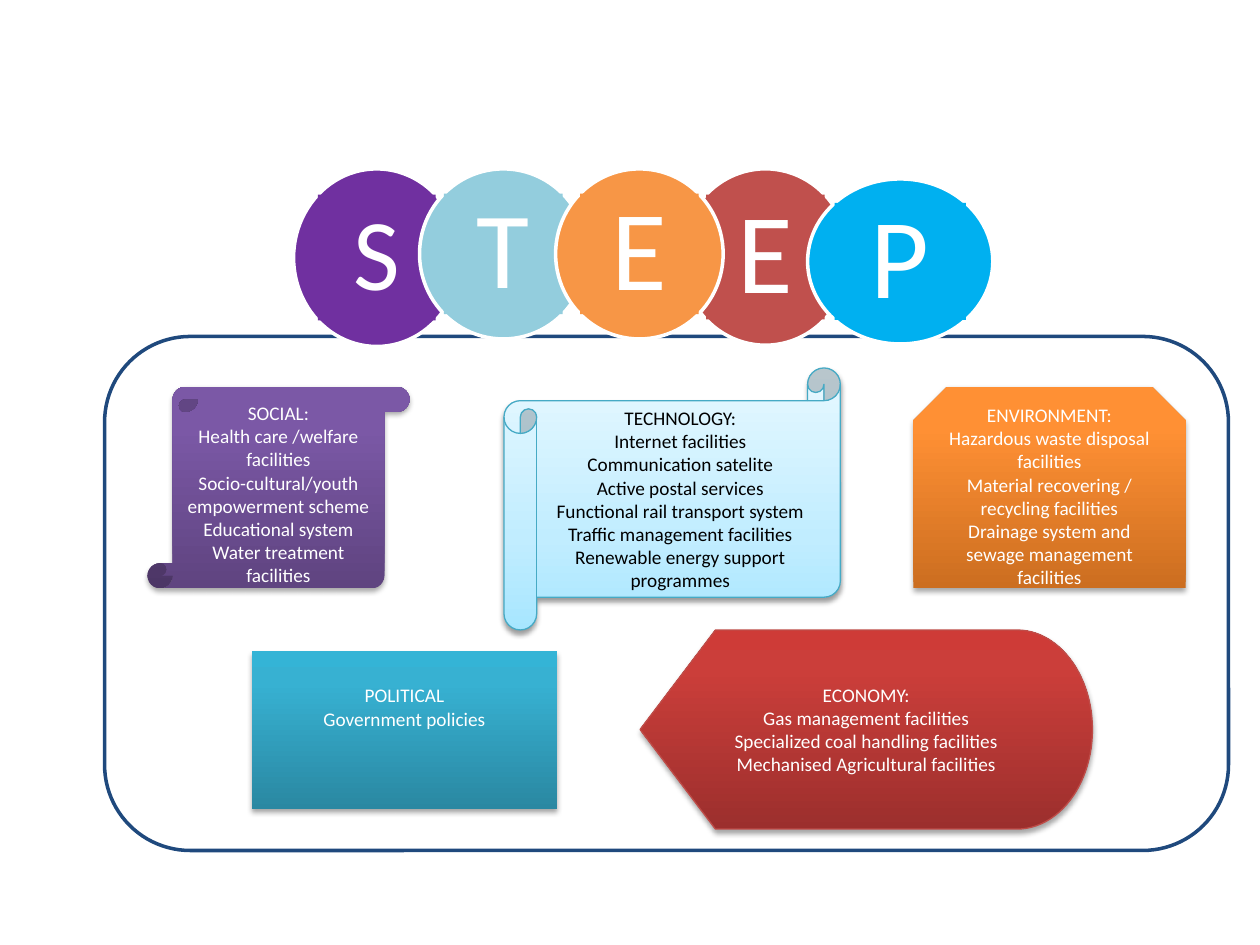
from copy import deepcopy
from dataclasses import dataclass
from typing import Optional

from lxml import etree
from pptx import Presentation
from pptx.dml.color import RGBColor
from pptx.enum import shapes, text
from pptx.oxml import ns
from pptx.util import Inches, Pt

Kind = shapes.MSO_SHAPE


@dataclass(frozen=True)
class Theme:
    font: str = "Calibri"
    body_size: float = 11
    white: str = "FFFFFF"
    black: str = "000000"
    frame: str = "1F497D"
    thin: float = 0.75
    thick: float = 2
    purple: tuple = ((0, "5F4480"), (80, "7B58A6"), (100, "7C57A8"))
    ice: tuple = ((0, "A7E6FF"), (35, "C1EDFF"), (100, "E7F8FF"))
    orange: tuple = ((0, "CC6E20"), (80, "FF9034"), (100, "FF9136"))
    teal: tuple = ((0, "2A88A2"), (80, "37B1D2"), (100, "34B4D6"))
    red: tuple = ((0, "9C2F2D"), (80, "CB3E3A"), (100, "CE3B37"))
    ice_line: str = "46AAC5"
    red_line: str = "BF4C48"


THEME = Theme()
INSCRIBED = 0.146


@dataclass(frozen=True)
class Box:
    left: float
    top: float
    width: float
    height: float

    def inscribed(self) -> "Box":
        return Box(
            self.left + self.width * INSCRIBED,
            self.top + self.height * INSCRIBED,
            self.width * (1 - 2 * INSCRIBED),
            self.height * (1 - 2 * INSCRIBED),
        )


@dataclass(frozen=True)
class Panel:
    kind: Kind
    box: Box
    stops: tuple
    lines: tuple
    text_color: str = THEME.white
    outline: Optional[str] = None
    shadow_alpha: int = 35
    bottom_inset: float = 0.05


@dataclass(frozen=True)
class Letter:
    character: str
    box: Box
    color: str
    size: float
    inset: float = 0.09


PANELS = (
    Panel(Kind.RECTANGLE, Box(2, 5.17, 2.42, 1.25), THEME.teal,
          ("POLITICAL", "Government policies"), bottom_inset=0.42),
    Panel(Kind.SNIP_2_SAME_RECTANGLE, Box(7.25, 3.07, 2.16, 1.6), THEME.orange,
          ("ENVIRONMENT:", "Hazardous waste disposal facilities",
           "Material recovering / recycling facilities",
           "Drainage system and sewage management facilities")),
    Panel(Kind.FLOWCHART_DISPLAY, Box(5.08, 5, 3.59, 1.58), THEME.red,
          ("ECONOMY:", "Gas management facilities",
           "Specialized coal handling facilities",
           "Mechanised Agricultural facilities"), outline=THEME.red_line),
    Panel(Kind.VERTICAL_SCROLL, Box(1.17, 3.07, 2.08, 1.6), THEME.purple,
          ("SOCIAL:", "Health care /welfare facilities",
           "Socio-cultural/youth empowerment scheme", "Educational system",
           "Water treatment facilities")),
    Panel(Kind.HORIZONTAL_SCROLL, Box(4, 2.92, 2.67, 2.08), THEME.ice,
          ("TECHNOLOGY:", "Internet facilities", "Communication satelite",
           "Active postal services", "Functional rail transport system",
           "Traffic management facilities",
           "Renewable energy support programmes"),
          text_color=THEME.black, outline=THEME.ice_line, shadow_alpha=38),
)

LETTERS = (
    Letter("S", Box(2.33, 1.34, 1.32, 1.41), "7030A0", 58, 0.08),
    Letter("T", Box(3.33, 1.34, 1.33, 1.35), "93CDDD", 62),
    Letter("E", Box(5.41, 1.34, 1.33, 1.4), "C0504D", 65),
    Letter("E", Box(4.41, 1.34, 1.33, 1.35), "F79646", 65),
    Letter("P", Box(6.41, 1.42, 1.47, 1.31), "00B0F0", 65),
)


def add_shape(slide, kind: Kind, box: Box, fill: Optional[str] = None,
              outline: Optional[str] = None, weight: float = THEME.thick):
    shape = slide.shapes.add_shape(
        kind, Inches(box.left), Inches(box.top), Inches(box.width), Inches(box.height))
    shape.shadow.inherit = False
    if fill:
        shape.fill.solid()
        shape.fill.fore_color.rgb = RGBColor.from_string(fill)
    else:
        shape.fill.background()
    if outline:
        shape.line.color.rgb = RGBColor.from_string(outline)
        shape.line.width = Pt(weight)
    else:
        shape.line.fill.background()
    return shape


def set_gradient(shape, stops: tuple) -> None:
    shape.fill.gradient()
    shape.fill.gradient_angle = 90
    stop_list = shape._element.spPr.find(".//" + ns.qn("a:gsLst"))
    stop_list.append(deepcopy(stop_list[0]))
    for stop, (position, color) in zip(shape.fill.gradient_stops, stops):
        stop.position = position / 100
        stop.color.rgb = RGBColor.from_string(color)


def set_shadow(shape, alpha: int) -> None:
    effects = shape._element.spPr.find(ns.qn("a:effectLst"))
    shadow = etree.SubElement(
        effects, ns.qn("a:outerShdw"), blurRad=str(Pt(3.1)), dist=str(Pt(1.8)),
        dir="5400000", rotWithShape="0")
    color = etree.SubElement(shadow, ns.qn("a:srgbClr"), val=THEME.black)
    etree.SubElement(color, ns.qn("a:alpha"), val=str(alpha * 1000))


def write_lines(shape, lines: tuple, size: float, color: str) -> None:
    frame = shape.text_frame
    frame.word_wrap = True
    frame.vertical_anchor = text.MSO_ANCHOR.MIDDLE
    frame.text = "\n".join(lines)
    for paragraph in frame.paragraphs:
        paragraph.alignment = text.PP_ALIGN.CENTER
        paragraph.font.name = THEME.font
        paragraph.font.size = Pt(size)
        paragraph.font.color.rgb = RGBColor.from_string(color)


def draw_panel(slide, panel: Panel) -> None:
    shape = add_shape(slide, panel.kind, panel.box, outline=panel.outline, weight=THEME.thin)
    set_gradient(shape, panel.stops)
    set_shadow(shape, panel.shadow_alpha)
    write_lines(shape, panel.lines, THEME.body_size, panel.text_color)
    shape.text_frame.margin_bottom = Inches(panel.bottom_inset)


def draw_letter(slide, letter: Letter) -> None:
    add_shape(slide, Kind.OVAL, letter.box, letter.color, THEME.white)
    label = add_shape(slide, Kind.RECTANGLE, letter.box.inscribed(), letter.color)
    write_lines(label, (letter.character,), letter.size, THEME.white)
    frame = label.text_frame
    frame.margin_left = frame.margin_right = Inches(letter.inset)
    frame.margin_top = frame.margin_bottom = Inches(letter.inset)
    frame.paragraphs[0].line_spacing = 0.9


def main() -> None:
    presentation = Presentation()
    presentation.slide_width = Inches(10)
    presentation.slide_height = Inches(7.5)
    slide = presentation.slides.add_slide(presentation.slide_layouts[6])
    for panel in PANELS:
        draw_panel(slide, panel)
    add_shape(slide, Kind.ROUNDED_RECTANGLE, Box(0.83, 2.67, 8.92, 4.08), outline=THEME.frame)
    for letter in LETTERS:
        draw_letter(slide, letter)
    presentation.save("out.pptx")


if __name__ == "__main__":
    main()
